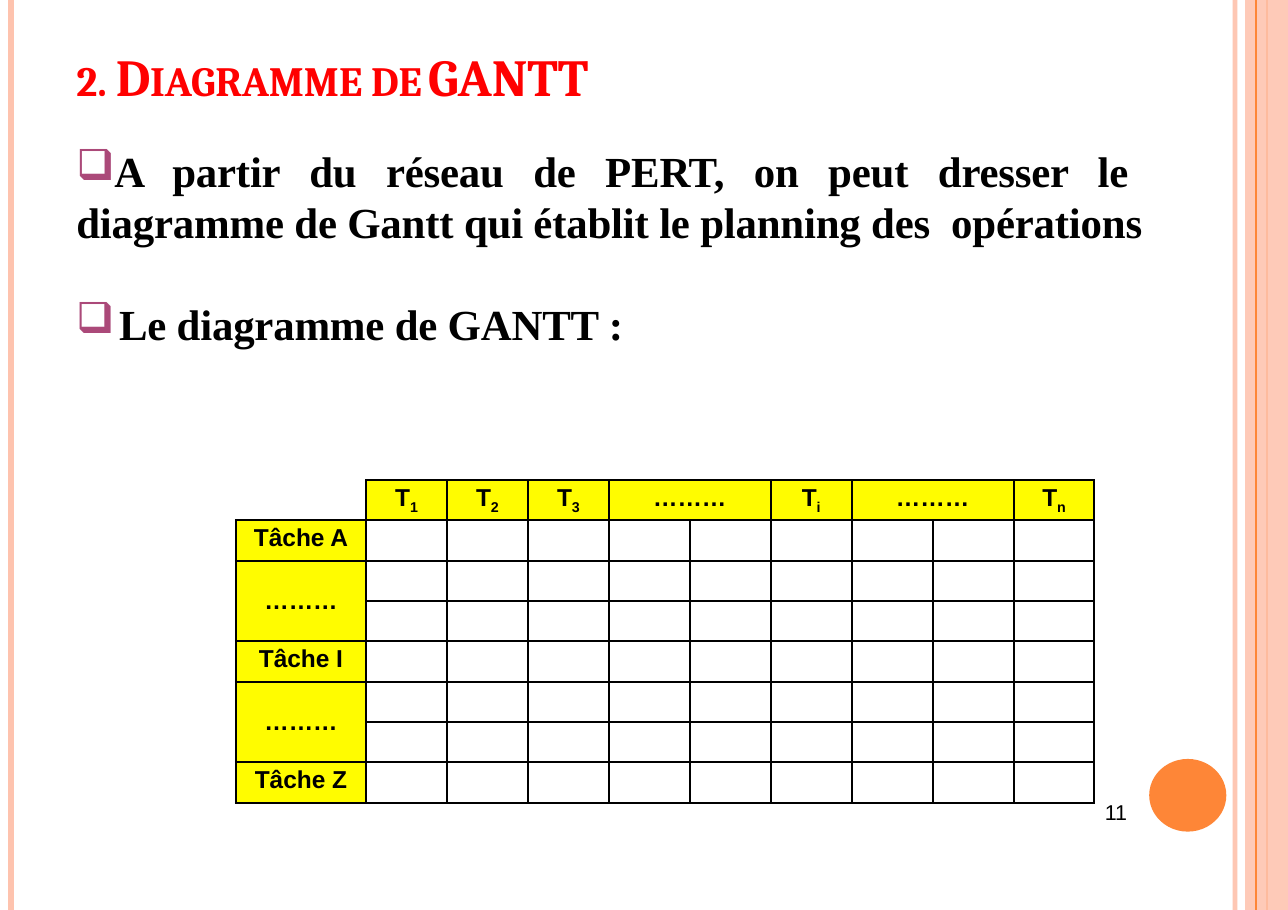
from lxml import etree
from pptx import Presentation
from pptx.dml.color import RGBColor
from pptx.enum.shapes import MSO_CONNECTOR, MSO_SHAPE
from pptx.enum.text import MSO_ANCHOR, PP_ALIGN
from pptx.oxml.ns import qn
from pptx.util import Pt

STRAIGHT = MSO_CONNECTOR.STRAIGHT
RECTANGLE, OVAL = MSO_SHAPE.RECTANGLE, MSO_SHAPE.OVAL
TOP, MIDDLE, BOTTOM = MSO_ANCHOR.TOP, MSO_ANCHOR.MIDDLE, MSO_ANCHOR.BOTTOM
LEFT, CENTER, JUSTIFY = PP_ALIGN.LEFT, PP_ALIGN.CENTER, PP_ALIGN.JUSTIFY

PAGE_WIDTH, PAGE_HEIGHT = 841.7, 594.7
BLACK, RED, YELLOW = "000000", "FF0000", "FFFC00"
PEACH, ORANGE, PLUM = "FEC3AE", "FE8637", "AB4979"
FIRST_COLUMN, PERIOD_COLUMN, ROW_HEIGHT = 85, 52.9, 26.37
DOTS = "………"
# column or row, label, subscript, number of cells covered
PERIODS = [(1, "T", "1", 1), (2, "T", "2", 1), (3, "T", "3", 1), (4, DOTS, "", 2),
           (6, "T", "i", 1), (7, DOTS, "", 2), (9, "T", "n", 1)]
TASKS = [(1, "Tâche A", 1), (2, DOTS, 2), (4, "Tâche I", 1), (5, DOTS, 2), (7, "Tâche Z", 1)]


def color(hex_string):
    return RGBColor.from_string(hex_string)


def add_child(parent, tag, **attributes):
    return etree.SubElement(parent, qn(tag), attributes)


def set_opacity(fill_parent, percent):
    for rgb in fill_parent.iter(qn("a:srgbClr")):
        add_child(rgb, "a:alpha", val=str(percent * 1000))


def add_vertical_line(page, x, hex_string, width, opacity=100):
    line = page.shapes.add_connector(STRAIGHT, Pt(x), 0, Pt(x), Pt(PAGE_HEIGHT))
    line.line.color.rgb = color(hex_string)
    line.line.width = Pt(width)
    if opacity < 100:
        set_opacity(line.line._get_or_add_ln(), opacity)
    add_child(line._element.spPr, "a:effectLst")


def add_filled_shape(page, kind, left, top, width, height, hex_string, opacity=100):
    shape = page.shapes.add_shape(kind, Pt(left), Pt(top), Pt(width), Pt(height))
    shape.shadow.inherit = False
    shape.fill.solid()
    shape.fill.fore_color.rgb = color(hex_string)
    shape.line.fill.background()
    if opacity < 100:
        set_opacity(shape._element.spPr, opacity)


def add_text_frame(page, left, top, width, height, anchor=TOP):
    box = page.shapes.add_textbox(Pt(left), Pt(top), Pt(width), Pt(height))
    frame = box.text_frame
    frame.word_wrap = True
    frame.vertical_anchor = anchor
    frame.margin_left = frame.margin_right = frame.margin_top = frame.margin_bottom = 0
    return frame


def set_text(para, text, font_name, size, hex_string=BLACK, bold=True, align=LEFT):
    span = para.add_run()
    span.text = text
    para.alignment = align
    font = para.font
    font.name, font.size, font.bold = font_name, Pt(size), bold
    font.color.rgb = color(hex_string)
    return span


def tighten(span):
    span.font._element.set("spc", "-10")


def set_bullet(para, margin, indent):
    properties = para._p.get_or_add_pPr()
    properties.set("marL", str(Pt(margin)))
    properties.set("indent", str(Pt(indent)))
    bullet_color = etree.Element(qn("a:buClr"))
    add_child(bullet_color, "a:srgbClr", val=PLUM)
    bullet = etree.Element(qn("a:buChar"), {"char": "❑"})
    default_font = properties.find(qn("a:defRPr"))
    default_font.addprevious(bullet_color)
    default_font.addprevious(bullet)


def set_borders(cell, hidden_sides=""):
    """Draw the four sides, leaving out those named by letter (L, R, T, B)."""
    properties = cell._tc.get_or_add_tcPr()
    for side in "LRTB":
        border = add_child(properties, f"a:ln{side}", w=str(Pt(1.5)))
        if side in hidden_sides:
            add_child(border, "a:noFill")
        else:
            add_child(add_child(border, "a:solidFill"), "a:srgbClr", val=BLACK)


def fill_label(cell, text, subscript="", anchor=TOP):
    cell.fill.solid()
    cell.fill.fore_color.rgb = color(YELLOW)
    cell.vertical_anchor = anchor
    if anchor == TOP:
        cell.margin_top = Pt(3)
    para = cell.text_frame.paragraphs[0]
    set_text(para, text, "Arial", 16, align=CENTER)
    if subscript:
        span = para.add_run()
        span.text = subscript
        span.font._element.set("baseline", "-25000")


def add_gantt_table(page, left, top):
    width = FIRST_COLUMN + 9 * PERIOD_COLUMN
    table = page.shapes.add_table(8, 10, Pt(left), Pt(top), Pt(width), Pt(8 * ROW_HEIGHT)).table
    table.first_row = table.horz_banding = False
    for index, column in enumerate(table.columns):
        column.width = Pt(PERIOD_COLUMN if index else FIRST_COLUMN)
    for row in table.rows:
        row.height = Pt(ROW_HEIGHT)
    corner = table.cell(0, 0)
    for cell in table.iter_cells():
        cell.margin_left = cell.margin_right = cell.margin_top = cell.margin_bottom = 0
        set_borders(cell, "LT" if cell == corner else "")
        cell.fill.background()
    for column, text, subscript, count in PERIODS:
        if count > 1:
            table.cell(0, column).merge(table.cell(0, column + count - 1))
        fill_label(table.cell(0, column), text, subscript)
    for row, text, count in TASKS:
        if count > 1:
            table.cell(row, 0).merge(table.cell(row + count - 1, 0))
        fill_label(table.cell(row, 0), text, anchor=MIDDLE if count > 1 else TOP)


def add_frame_decoration(page):
    add_vertical_line(page, 807.1, PEACH, 3, 93)
    add_vertical_line(page, 7.2, PEACH, 4.5)
    add_vertical_line(page, 828, ORANGE, 1.5)
    add_filled_shape(page, RECTANGLE, 813.6, 0, 28.1, PAGE_HEIGHT, PEACH, 87)
    add_vertical_line(page, 820.8, ORANGE, 0.75)
    add_filled_shape(page, OVAL, 751, 496, 50.4, 47.5, ORANGE)


def add_title(page):
    para = add_text_frame(page, 50, 27.4, 474, 42.5, BOTTOM).paragraphs[0]
    small_caps = set_text(para, "2. Diagramme de ", "Cambria", 34, RED)
    small_caps.font._element.set("cap", "small")
    tighten(small_caps)
    para.add_run().text = "GANTT"


def add_body(page):
    frame = add_text_frame(page, 49, 94.5, 707.8, 136.8)
    intro = frame.paragraphs[0]
    tighten(set_text(intro, "A partir du réseau de PERT, on peut dresser le  diagramme de "
                     "Gantt qui établit le planning des  opérations",
                     "Times New Roman", 28, align=JUSTIFY))
    set_bullet(intro, 0.9, 0)
    heading = frame.add_paragraph()
    tighten(set_text(heading, "Le diagramme de GANTT :", "Times New Roman", 28, align=JUSTIFY))
    heading.space_before = Pt(33)
    set_bullet(heading, 28.8, -28)


def add_page_number(page):
    para = add_text_frame(page, 722, 522.7, 21.6, 18).paragraphs[0]
    set_text(para, "11", "Arial", 14, bold=False)
    para.line_spacing = Pt(16.4)


def main():
    deck = Presentation()
    deck.slide_width, deck.slide_height = Pt(PAGE_WIDTH), Pt(PAGE_HEIGHT)
    page = deck.slides.add_slide(deck.slide_layouts[6])
    add_frame_decoration(page)
    add_body(page)
    add_page_number(page)
    add_title(page)
    add_gantt_table(page, 154.2, 313.7)
    deck.save("out.pptx")


if __name__ == "__main__":
    main()
